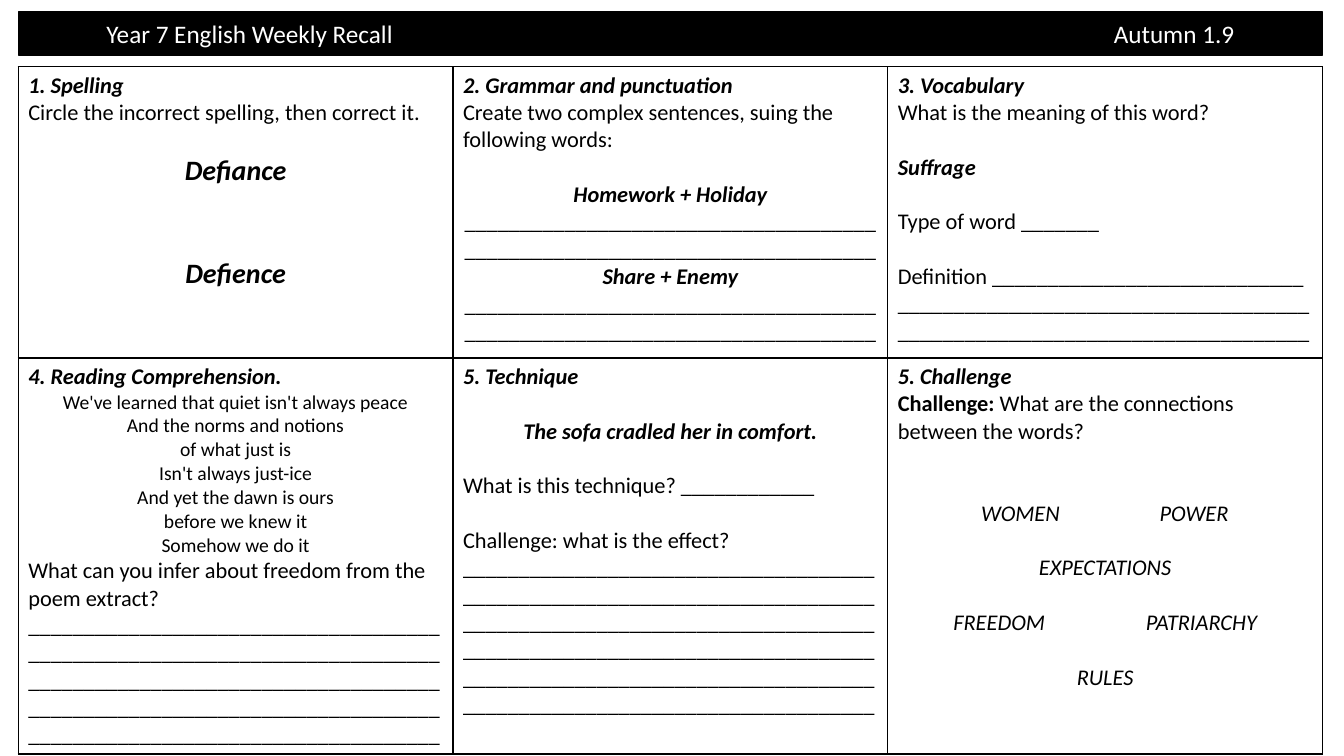
"""Build the weekly English recall worksheet slide."""
from dataclasses import dataclass

import lxml.etree
import pptx
import pptx.dml.color
import pptx.enum.shapes
import pptx.enum.text
import pptx.oxml.ns
import pptx.slide
import pptx.table
import pptx.text.text
import pptx.util

COLOURS = {"ink": "000000", "paper": "FFFFFF"}
FONT = "Calibri"
MARGIN_LEFT = 0.46
CONTENT_WIDTH = 32.87
ROW_HEIGHTS = (7.34, 9.47)
BLANK_LINE = 19.5
LINE_LENGTH = 37
CENTRE = pptx.enum.text.PP_ALIGN.CENTER
LEFT = pptx.enum.text.PP_ALIGN.LEFT


@dataclass(frozen=True)
class Words:
    text: str
    bold: bool = False
    italic: bool = False


@dataclass(frozen=True)
class Line:
    words: tuple[Words, ...]
    size: float = 16
    align: pptx.enum.text.PP_ALIGN = LEFT
    gap: float = 0
    tabs: tuple[float, ...] = ()


def plain(text: str, **layout) -> Line:
    return Line((Words(text),), **layout)


def strong(text: str, **layout) -> Line:
    return Line((Words(text, True, True),), **layout)


def slanted(text: str, **layout) -> Line:
    return Line((Words(text, False, True),), **layout)


def rule(count: int) -> str:
    return "_" * (LINE_LENGTH * count)


POEM = (
    "We've learned that quiet isn't always peace",
    "And the norms and notions",
    "of what just is",
    "Isn't always just-ice",
    "And yet the dawn is ours",
    "before we knew it",
    "Somehow we do it",
)
SPELLING = (
    strong("1. Spelling"),
    plain("Circle the incorrect spelling, then correct it."),
    strong("Defiance", size=20, align=CENTRE, gap=BLANK_LINE),
    strong("Defience", size=20, align=CENTRE, gap=48.8),
)
GRAMMAR = (
    strong("2. Grammar and punctuation"),
    plain("Create two complex sentences, suing the following words:"),
    strong("Homework + Holiday", align=CENTRE, gap=BLANK_LINE),
    plain(rule(2), align=CENTRE),
    strong("Share + Enemy", align=CENTRE),
    plain(rule(2), align=CENTRE),
)
VOCABULARY = (
    strong("3. Vocabulary"),
    plain("What is the meaning of this word?"),
    strong("Suffrage", gap=BLANK_LINE),
    plain("Type of word " + "_" * 7, gap=BLANK_LINE),
    plain("Definition " + "_" * 28 + " " + rule(2), gap=BLANK_LINE),
)
READING = (
    strong("4. Reading Comprehension."),
    *(plain(verse, size=14, align=CENTRE) for verse in POEM),
    plain("What can you infer about freedom from the poem extract?"),
    plain(rule(5)),
)
TECHNIQUE = (
    strong("5. Technique"),
    strong("The sofa cradled her in comfort.", align=CENTRE, gap=BLANK_LINE),
    plain("What is this technique? " + "_" * 12, gap=BLANK_LINE),
    plain("Challenge: what is the effect? " + rule(6), gap=BLANK_LINE),
)
CHALLENGE = (
    strong("5. Challenge"),
    Line((Words("Challenge: ", True), Words("What are the connections between the words?"))),
    slanted("\tWOMEN\tPOWER", gap=2 * BLANK_LINE, tabs=(2.1, 6.6)),
    slanted("EXPECTATIONS", align=CENTRE, gap=BLANK_LINE),
    slanted("\tFREEDOM\tPATRIARCHY", gap=BLANK_LINE, tabs=(1.4, 6.25)),
    slanted("RULES", align=CENTRE, gap=BLANK_LINE),
)
TASKS = ((SPELLING, GRAMMAR, VOCABULARY), (READING, TECHNIQUE, CHALLENGE))
TITLE = plain("\tYear 7 English Weekly Recall\tAutumn 1.9", size=18, tabs=(1.97, 27.36))


def colour(name: str) -> pptx.dml.color.RGBColor:
    return pptx.dml.color.RGBColor.from_string(COLOURS[name])


def add_element(parent, tag: str, **attributes: str):
    return lxml.etree.SubElement(parent, pptx.oxml.ns.qn(tag), attributes)


def write_lines(frame: pptx.text.text.TextFrame, lines: tuple[Line, ...], ink: str) -> None:
    for index, line in enumerate(lines):
        paragraph = frame.add_paragraph() if index else frame.paragraphs[0]
        paragraph.alignment = line.align
        paragraph.space_before = pptx.util.Pt(line.gap)
        if line.tabs:
            stops = add_element(paragraph._p.get_or_add_pPr(), "a:tabLst")
            for stop in line.tabs:
                add_element(stops, "a:tab", pos=str(pptx.util.Cm(stop)), algn="l")
        for words in line.words:
            run = paragraph.add_run()
            run.text = words.text
            run.font.name = FONT
            run.font.size = pptx.util.Pt(line.size)
            run.font.bold = words.bold
            run.font.italic = words.italic
            run.font.color.rgb = colour(ink)


def style_cell(cell: pptx.table._Cell) -> None:
    properties = cell._tc.get_or_add_tcPr()
    for side in ("a:lnL", "a:lnR", "a:lnT", "a:lnB"):
        border = add_element(properties, side, w=str(pptx.util.Pt(1)))
        add_element(add_element(border, "a:solidFill"), "a:srgbClr", val=COLOURS["ink"])
    cell.fill.solid()
    cell.fill.fore_color.rgb = colour("paper")


def add_title_bar(slide: pptx.slide.Slide) -> None:
    shape = slide.shapes.add_shape(
        pptx.enum.shapes.MSO_SHAPE.RECTANGLE,
        pptx.util.Cm(MARGIN_LEFT), pptx.util.Cm(0.3),
        pptx.util.Cm(CONTENT_WIDTH), pptx.util.Cm(1.09),
    )
    shape.shadow.inherit = False
    shape.fill.solid()
    shape.fill.fore_color.rgb = colour("ink")
    shape.line.color.rgb = colour("ink")
    shape.line.width = pptx.util.Pt(1)
    shape.text_frame.vertical_anchor = pptx.enum.text.MSO_ANCHOR.MIDDLE
    write_lines(shape.text_frame, (TITLE,), "paper")


def add_task_grid(slide: pptx.slide.Slide) -> None:
    table = slide.shapes.add_table(
        len(TASKS), len(TASKS[0]),
        pptx.util.Cm(MARGIN_LEFT), pptx.util.Cm(1.68),
        pptx.util.Cm(CONTENT_WIDTH), pptx.util.Cm(sum(ROW_HEIGHTS)),
    ).table
    table.first_row = False
    table.horz_banding = False
    for row_index, (height, tasks) in enumerate(zip(ROW_HEIGHTS, TASKS)):
        table.rows[row_index].height = pptx.util.Cm(height)
        for column_index, lines in enumerate(tasks):
            cell = table.cell(row_index, column_index)
            style_cell(cell)
            write_lines(cell.text_frame, lines, "ink")


def main() -> None:
    presentation = pptx.Presentation()
    presentation.slide_width = pptx.util.Cm(33.87)
    presentation.slide_height = pptx.util.Cm(19.05)
    slide = presentation.slides.add_slide(presentation.slide_layouts[6])
    add_title_bar(slide)
    add_task_grid(slide)
    presentation.save("out.pptx")


if __name__ == "__main__":
    main()
